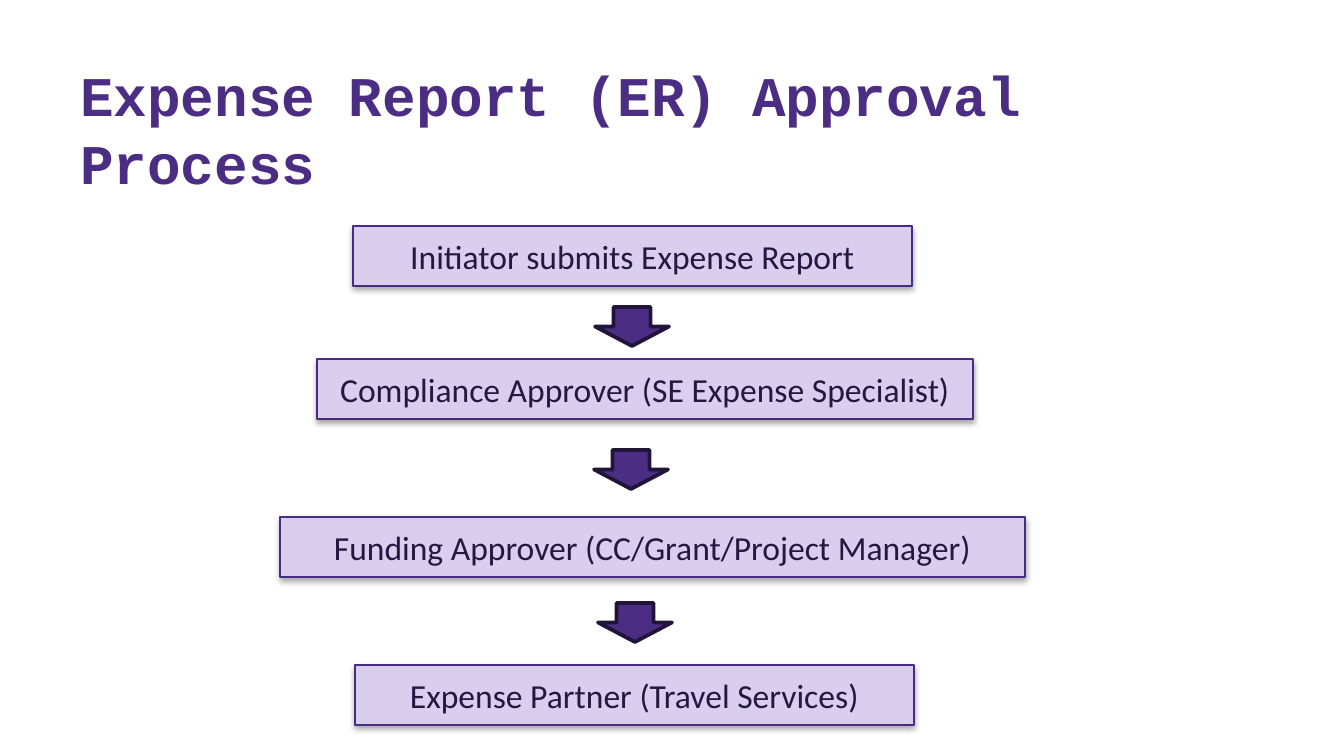
from lxml import etree
from pptx import Presentation
from pptx import util as u
from pptx.dml.color import RGBColor
from pptx.enum import shapes, text
from pptx.oxml.ns import qn

TITLE = "Expense Report (ER) Approval Process"
STEPS = [
    ("Initiator submits Expense Report", 353, 226, 559),
    ("Compliance Approver (SE Expense Specialist)", 317, 359, 656),
    ("Funding Approver (CC/Grant/Project Manager)", 280, 517, 745),
    ("Expense Partner (Travel Services)", 355, 665, 559),
]
ARROWS = [(595, 307), (594, 450), (598, 603)]
STEP_HEIGHT = 60
ARROW_SIZE = (74, 39)

PURPLE = RGBColor(0x4B, 0x2E, 0x83)
DARK_EDGE = RGBColor(0x21, 0x14, 0x39)
LILAC = RGBColor(0xD9, 0xCE, 0xEE)
STEP_EDGE = RGBColor(0x49, 0x2B, 0x82)
STEP_TEXT = RGBColor(0x26, 0x17, 0x42)

PAGE_WIDTH, PAGE_HEIGHT = 1344, 756
SCALE = u.Inches(10) / PAGE_WIDTH


def px(*lengths):
    return [round(length * SCALE) for length in lengths]


def write(box, words, font_name, size, color, bold=False):
    box.text_frame.word_wrap = True
    para = box.text_frame.paragraphs[0]
    para.text = words
    font = para.runs[0].font
    font.name, font.size, font.bold = font_name, u.Pt(size), bold
    font.color.rgb = color
    return para


def add_block(page, kind, place, fill, edge, edge_width):
    block = page.shapes.add_shape(kind, *px(*place))
    block.shadow.inherit = False
    block.fill.solid()
    block.fill.fore_color.rgb = fill
    block.line.color.rgb = edge
    block.line.width = u.Pt(edge_width)
    return block


def drop_shadow(block):
    effects = block._element.spPr.find(qn("a:effectLst"))
    shadow = etree.SubElement(
        effects, qn("a:outerShdw"), blurRad=str(u.Pt(3.1)), dist=str(u.Pt(1.8)),
        dir="5400000", rotWithShape="0")
    color = etree.SubElement(shadow, qn("a:srgbClr"), val="000000")
    etree.SubElement(color, qn("a:alpha"), val="35000")


def main():
    deck = Presentation()
    deck.slide_width, deck.slide_height = px(PAGE_WIDTH, PAGE_HEIGHT)
    page = deck.slides.add_slide(deck.slide_layouts[6])

    title = page.shapes.add_textbox(*px(67, 55, 1203, 147))
    write(title, TITLE, "Courier New", 30, PURPLE, bold=True)
    title.text_frame.vertical_anchor = text.MSO_ANCHOR.BOTTOM

    for left, top in ARROWS:
        add_block(page, shapes.MSO_SHAPE.DOWN_ARROW, (left, top, *ARROW_SIZE),
                  PURPLE, DARK_EDGE, 2)

    for words, left, top, width in STEPS:
        step = add_block(page, shapes.MSO_SHAPE.RECTANGLE,
                         (left, top, width, STEP_HEIGHT), LILAC, STEP_EDGE, 0.75)
        drop_shadow(step)
        para = write(step, words, "Calibri", 18, STEP_TEXT)
        para.alignment = text.PP_ALIGN.CENTER
        step.text_frame.vertical_anchor = text.MSO_ANCHOR.MIDDLE

    deck.save("out.pptx")


if __name__ == "__main__":
    main()
